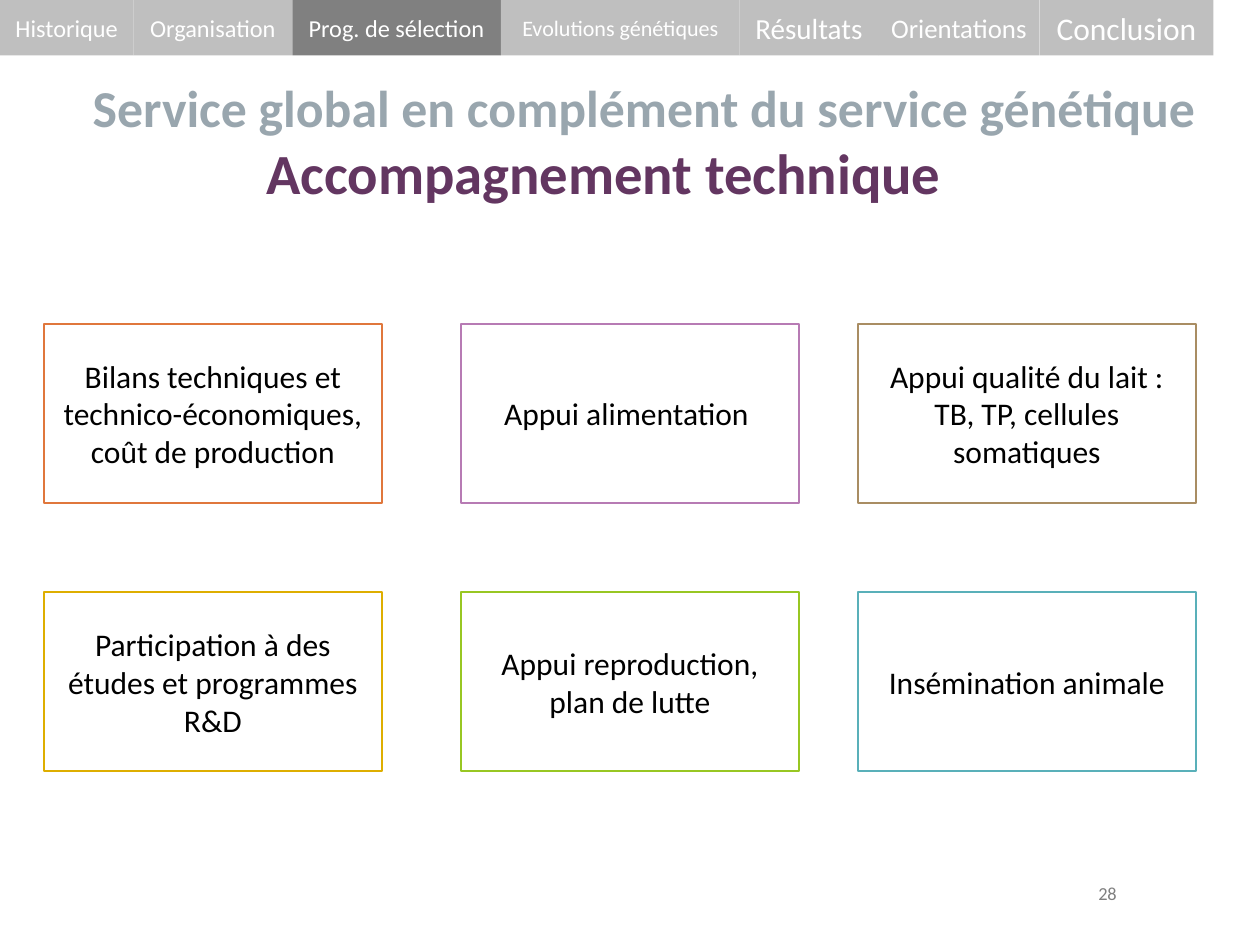
from pptx import Presentation
from pptx import util as u
from pptx.dml.color import RGBColor
from pptx.enum import shapes, text

COLORS = {
    "tab": "BFBFBF", "active": "808080", "white": "FFFFFF", "black": "000000",
    "heading": "99A6AE", "topic": "633661", "number": "808080",
    "orange": "E0773C", "mauve": "B77BB4", "brown": "A98D63",
    "yellow": "DEAE00", "green": "98C723", "teal": "59B0B9",
}
COLS, ROWS = 100, 75
CENTER, RIGHT = text.PP_ALIGN.CENTER, text.PP_ALIGN.RIGHT

TABS = [  # label, width in columns, text size
    ("Historique", 10.6, 13.9),
    ("Organisation", 12.6, 13.9),
    ("Prog. de sélection", 16.55, 13.9),
    ("Evolutions génétiques", 18.95, 12.6),
    ("Résultats", 11, 16.6),
    ("Orientations", 12.8, 15.3),
    ("Conclusion", 13.8, 18),
]
ACTIVE_TAB = "Prog. de sélection"
TAB_HEIGHT = 4.4

CARD_COLS, CARD_ROWS = (3.5, 36.6, 68.1), (25.7, 47)
CARD_SIZE = (26.8, 14.2)
CARDS = [
    [("Bilans techniques et technico-économiques, coût de production", "orange"),
     ("Appui alimentation ", "mauve"),
     ("Appui qualité du lait : TB, TP, cellules somatiques", "brown")],
    [("Participation à des études et programmes R&D", "yellow"),
     ("Appui reproduction, plan de lutte", "green"),
     ("Insémination animale", "teal")],
]


class Deck:
    """Style, slide and grid of COLS by ROWS cells."""

    def __init__(self, prs, font="Calibri"):
        self.prs, self.font = prs, font
        self.s = prs.slides.add_slide(prs.slide_layouts[6])

    def place(self, col, row, width, height):
        dx, dy = self.prs.slide_width / COLS, self.prs.slide_height / ROWS
        return [round(v) for v in (col * dx, row * dy, width * dx, height * dy)]

    def color(self, name):
        return RGBColor.from_string(COLORS[name])

    def set_text(self, sp, lines, wrap=True):
        """Fill sp with lines of (words, size, color, bold, alignment)."""
        tf = sp.text_frame
        tf.word_wrap = wrap
        tf.vertical_anchor = text.MSO_ANCHOR.MIDDLE
        for i, (words, size, color, bold, align) in enumerate(lines):
            p = tf.add_paragraph() if i else tf.paragraphs[0]
            p.add_run().text = words
            p.alignment = align
            p.font.name, p.font.size, p.font.bold = self.font, u.Pt(size), bold
            p.font.color.rgb = self.color(color)

    def box(self, at, words, size, fill, color, line=None, wrap=True):
        sp = self.s.shapes.add_shape(shapes.MSO_SHAPE.RECTANGLE, *self.place(*at))
        sp.shadow.inherit = False
        sp.fill.solid()
        sp.fill.fore_color.rgb = self.color(fill)
        if line:
            sp.line.color.rgb = self.color(line)
            sp.line.width = u.Pt(1.25)
        else:
            sp.line.fill.background()
        self.set_text(sp, [(words, size, color, False, CENTER)], wrap)

    def label(self, at, lines):
        self.set_text(self.s.shapes.add_textbox(*self.place(*at)), lines)


def main():
    prs = Presentation()
    prs.slide_width, prs.slide_height = u.Inches(10), u.Inches(7.5)
    deck = Deck(prs)

    col = 0
    for words, width, size in TABS:
        fill = "active" if words == ACTIVE_TAB else "tab"
        deck.box((col, 0, width, TAB_HEIGHT), words, size, fill, "white", wrap=False)
        col += width

    deck.label((-0.2, 4.4, 96.2, 13.6), [
        ("Service global en complément du service génétique", 29.6, "heading", True, RIGHT),
        ("Accompagnement technique", 32.4, "topic", True, CENTER),
    ])
    deck.label((85, 70, 5.8, 1.7), [("28", 10.5, "number", False, CENTER)])

    for row, cards in zip(CARD_ROWS, CARDS):
        for col, (words, line) in zip(CARD_COLS, cards):
            deck.box((col, row, *CARD_SIZE), words, 18, "white", "black", line)

    prs.save("out.pptx")


if __name__ == "__main__":
    main()
